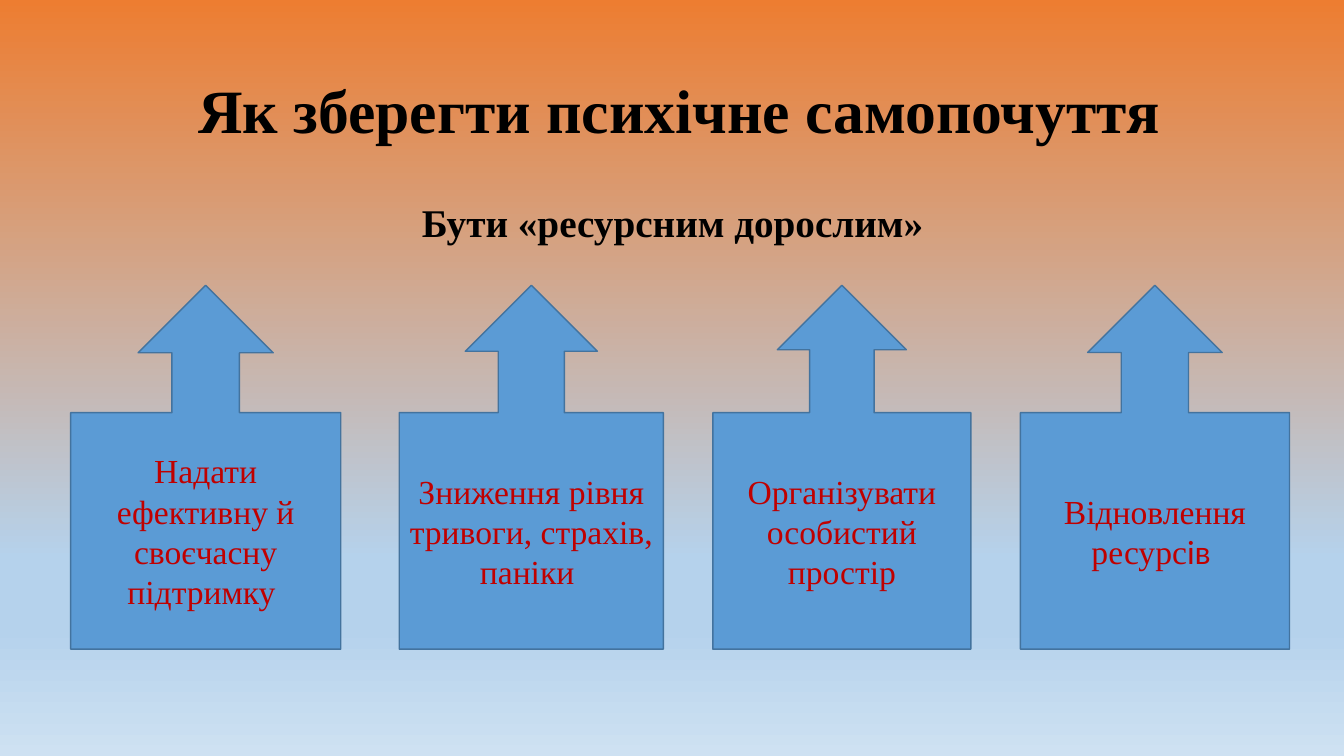
"""Build the slide about keeping mental well-being."""
from copy import deepcopy
from dataclasses import dataclass

from lxml.etree import SubElement
from pptx import Presentation
from pptx.dml.color import RGBColor
from pptx.enum.shapes import MSO_SHAPE
from pptx.enum.text import MSO_ANCHOR, MSO_AUTO_SIZE, PP_ALIGN
from pptx.oxml.ns import qn
from pptx.util import Inches, Pt


@dataclass(frozen=True)
class Theme:
    """Hold the colours, fonts and type sizes."""
    serif: str = "Times New Roman"
    sans: str = "Calibri"
    ink: str = "000000"
    accent: str = "C00000"
    fill: str = "5B9BD5"
    edge: str = "43739E"
    title: int = 44
    lead: int = 28
    label: int = 24
    sky: tuple = ((0, "ED7D31"), (0.74, "B5D2EC"), (0.83, "B5D2EC"), (1, "CEE1F2"))


THEME = Theme()
SIZE = (13.33, 7.5)
TITLE = [(" ", THEME.sans, False), ("Як зберегти психічне самопочуття", THEME.serif, True)]
LEAD = [("Бути «ресурсним дорослим»", THEME.serif, True)]
TITLE_BOX = (0.92, 0.4, 11.5, 1.45)
LEAD_BOX = (0.92, 1.97, 11.5, 4.76)
TOP, TALL = 2.83, 3.61
STEPS = [
    (0.7, 2.68, [("Надати ефективну й своєчасну підтримку ", THEME.serif, False)]),
    (3.96, 2.62, [("Зниження рівня тривоги, страхів, паніки ", THEME.serif, False)]),
    (7.07, 2.56, [("Організувати особистий простір", THEME.serif, False)]),
    (10.12, 2.67, [("Відновлення ресурс", THEME.serif, False), ("ів ", THEME.sans, False)]),
]


def write(shape, runs, size, color, anchor=MSO_ANCHOR.MIDDLE, line=1.0, before=0):
    """Write centred runs into a shape and return the paragraph."""
    frame = shape.text_frame
    frame.word_wrap = True
    frame.auto_size = MSO_AUTO_SIZE.NONE
    frame.vertical_anchor = anchor
    para = frame.paragraphs[0]
    para.alignment = PP_ALIGN.CENTER
    para.line_spacing = line
    para.space_before = Pt(before)
    for text, face, bold in runs:
        run = para.add_run()
        run.text = text
        run.font.name = face
        run.font.bold = bold
        run.font.size = Pt(size)
        run.font.color.rgb = RGBColor.from_string(color)
    return para


def place(shape, box):
    """Move a shape to a box given in inches."""
    shape.left, shape.top, shape.width, shape.height = map(Inches, box)


def paint(slide):
    """Fill the background with the vertical gradient."""
    fill = slide.background.fill
    fill.gradient()
    fill.gradient_angle = 270
    stops = next(slide.element.iter(qn("a:gsLst")))
    while len(stops) < len(THEME.sky):
        stops.append(deepcopy(stops[0]))
    for stop, (spot, color) in zip(fill.gradient_stops, THEME.sky):
        stop.position = spot
        stop.color.rgb = RGBColor.from_string(color)


def callout(slide, left, width, runs):
    """Add one labelled up-arrow callout."""
    box = map(Inches, (left, TOP, width, TALL))
    shape = slide.shapes.add_shape(MSO_SHAPE.UP_ARROW_CALLOUT, *box)
    shape.shadow.inherit = False
    shape.fill.solid()
    shape.fill.fore_color.rgb = RGBColor.from_string(THEME.fill)
    shape.line.color.rgb = RGBColor.from_string(THEME.edge)
    shape.line.width = Pt(1)
    write(shape, runs, THEME.label, THEME.accent)


def main():
    """Build and save the slide."""
    deck = Presentation()
    deck.slide_width, deck.slide_height = map(Inches, SIZE)
    slide = deck.slides.add_slide(deck.slide_layouts[1])
    paint(slide)
    title, body = slide.placeholders
    place(title, TITLE_BOX)
    write(title, TITLE, THEME.title, THEME.ink, line=0.9)
    place(body, LEAD_BOX)
    para = write(body, LEAD, THEME.lead, THEME.ink, MSO_ANCHOR.TOP, 0.9, 10)
    props = para._p.get_or_add_pPr()
    props.set("marL", "0")
    props.set("indent", "0")
    SubElement(props, qn("a:buNone"))
    for step in STEPS:
        callout(slide, *step)
    deck.save("out.pptx")


if __name__ == "__main__":
    main()
